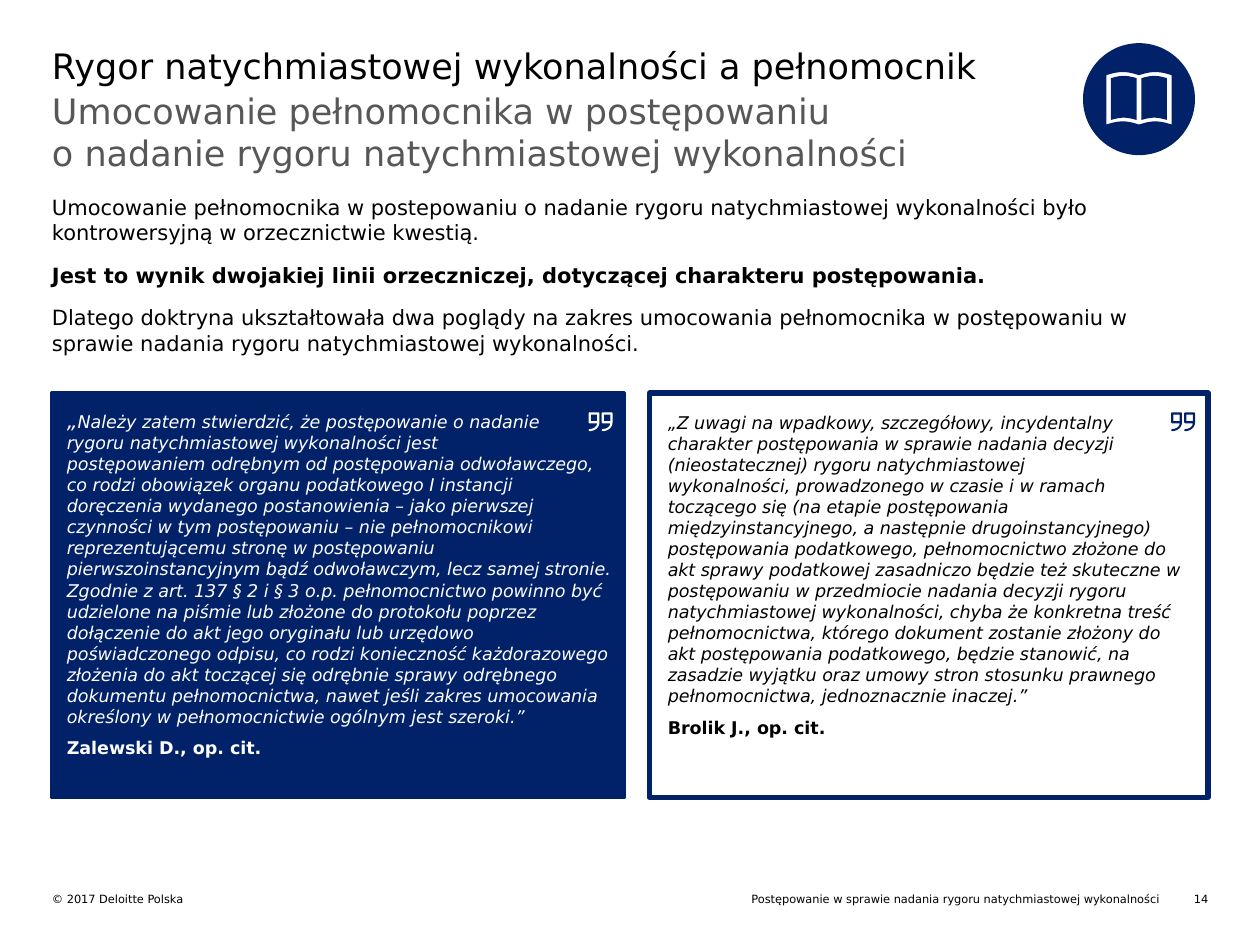
from dataclasses import dataclass
from math import cos, pi, sin, tau

from pptx import Presentation
from pptx.dml.color import RGBColor as Color
from pptx.enum.shapes import MSO_SHAPE as Preset
from pptx.enum.text import PP_ALIGN as Align
from pptx.util import Pt

Point = tuple[float, float]
Contour = list[Point]


@dataclass(frozen=True)
class Theme:
    font: str = "DejaVu Sans"
    navy: Color = Color(0x01, 0x21, 0x69)
    white: Color = Color(0xFF, 0xFF, 0xFF)
    black: Color = Color(0, 0, 0)
    grey: Color = Color(0x57, 0x57, 0x57)
    heading: float = 20
    body: float = 12
    quote: float = 10
    footer: float = 6.5


THEME = Theme()


@dataclass(frozen=True)
class Area:
    left: float
    top: float
    width: float
    height: float

    def lengths(self) -> list[Pt]:
        return [Pt(value) for value in (self.left, self.top, self.width, self.height)]


@dataclass(frozen=True)
class Passage:
    text: str
    bold: bool = False
    italic: bool = False
    lead: str = ""


@dataclass(frozen=True)
class TextBlock:
    area: Area
    passages: list[Passage]
    size: float
    color: Color = THEME.black
    align: Align = Align.LEFT
    before: float = 0
    after: float = 0


@dataclass(frozen=True)
class QuoteCard:
    frame: Area
    text: Area
    fill: Color
    border: float
    ink: Color
    mark_color: Color
    mark_left: float
    quote: Passage
    author: str


def draw_text(page, block: TextBlock) -> None:
    frame = page.shapes.add_textbox(*block.area.lengths()).text_frame
    frame.word_wrap = True
    frame.margin_left = frame.margin_top = frame.margin_right = frame.margin_bottom = 0
    for index, passage in enumerate(block.passages):
        para = frame.add_paragraph() if index else frame.paragraphs[0]
        para.alignment = block.align
        para.space_before = Pt(block.before if index else 0)
        para.space_after = Pt(block.after)
        font = para.font
        font.name, font.size = THEME.font, Pt(block.size)
        font.bold, font.italic = passage.bold, passage.italic
        font.color.rgb = block.color
        if passage.lead:
            span = para.add_run()
            span.text = passage.lead
            span.font.size = Pt(THEME.body)
        for number, line in enumerate(passage.text.splitlines()):
            if number:
                para.add_line_break()
            para.add_run().text = line


def draw_outline(page, contours: list[Contour], left: float, top: float, color: Color) -> None:
    placed = [[(Pt(left + x), Pt(top + y)) for x, y in contour] for contour in contours]
    builder = page.shapes.build_freeform(*placed[0][0], scale=1.0)
    for index, contour in enumerate(placed):
        if index:
            builder.move_to(*contour[0])
        builder.add_line_segments(contour[1:], close=True)
    shape = builder.convert_to_shape()
    shape.shadow.inherit = False
    shape.fill.solid()
    shape.fill.fore_color.rgb = color
    shape.line.fill.background()


def arched(start: float, end: float, y: float, rise: float) -> Contour:
    return [(start + (end - start) * step / 12, y - rise * sin(pi * step / 12)) for step in range(13)]


def draw_book_badge(page) -> None:
    circle = [(32 * cos(tau * step / 96), 32 * sin(tau * step / 96)) for step in range(96)]
    edge = 18.7
    cover = (arched(-edge, 0, -13.7, 1.8) + arched(0, edge, -13.7, 1.8)
             + arched(edge, 0, 14.5, 1.8) + arched(0, -edge, 14.5, 1.8))
    pages = [arched(side * 1.4, side * 16, -12, 1.3) + arched(side * 16, side * 1.4, 11.9, 1.3)
             for side in (-1, 1)]
    draw_outline(page, [circle, cover, *pages], 650.9, 56.7, THEME.navy)


def draw_quote_mark(page, left: float, top: float, color: Color) -> None:
    tail = [(0.5 + 5.7 * cos(pi / 2 * step / 8), 5.8 + 5 * sin(pi / 2 * step / 8)) for step in range(9)]
    inner = [(0.5 + 4.4 * cos(pi / 2 * step / 8), 6.3 + 3.3 * sin(pi / 2 * step / 8))
             for step in range(8, -1, -1)]
    outline = [(0.5, 0), (5.7, 0), (6.2, 0.5), *tail, (0, 10.3), *inner,
               (0.5, 6.3), (0, 5.8), (0, 0.5)]
    hole = [(1.3, 1.3), (4.9, 1.3), (4.9, 5), (1.3, 5)]
    for offset in (0, 7.5):
        draw_outline(page, [outline, hole], left + offset, top, color)


def draw_card(page, card: QuoteCard) -> None:
    shape = page.shapes.add_shape(Preset.RECTANGLE, *card.frame.lengths())
    shape.shadow.inherit = False
    shape.fill.solid()
    shape.fill.fore_color.rgb = card.fill
    shape.line.color.rgb = THEME.navy
    shape.line.width = Pt(card.border)
    draw_text(page, TextBlock(card.text, [card.quote, Passage(card.author, bold=True)],
                              THEME.quote, card.ink, before=6))
    draw_quote_mark(page, card.mark_left, 235.6, card.mark_color)


LEFT, WIDTH = 29.7, 661

BLOCKS = [
    TextBlock(Area(LEFT, 25.2, WIDTH, 26.6),
              [Passage("Rygor natychmiastowej wykonalności a pełnomocnik")], THEME.heading),
    TextBlock(Area(LEFT, 51.2, WIDTH, 59.8),
              [Passage("Umocowanie pełnomocnika w postępowaniu"),
               Passage("o nadanie rygoru natychmiastowej wykonalności")], THEME.heading, THEME.grey),
    TextBlock(Area(LEFT, 111, WIDTH, 97.2), [
        Passage("Umocowanie pełnomocnika w postepowaniu o nadanie rygoru natychmiastowej "
                "wykonalności było kontrowersyjną w orzecznictwie kwestią."),
        Passage("Jest to wynik dwojakiej linii orzeczniczej, dotyczącej charakteru postępowania.",
                bold=True),
        Passage("Dlatego doktryna ukształtowała dwa poglądy na zakres umocowania pełnomocnika "
                "w postępowaniu w sprawie nadania rygoru natychmiastowej wykonalności.")],
        THEME.body, after=10),
    TextBlock(Area(LEFT, 509.8, 316, 15.8), [Passage("© 2017 Deloitte Polska")], THEME.footer),
    TextBlock(Area(374.4, 509.8, 288.5, 15.8),
              [Passage("Postępowanie w sprawie nadania rygoru natychmiastowej wykonalności")],
              THEME.footer, align=Align.RIGHT),
    TextBlock(Area(672.5, 509.8, 18, 7.9), [Passage("14")], THEME.footer, align=Align.RIGHT),
]

CARDS = [
    QuoteCard(
        Area(29.4, 224.2, 327.6, 231.8), Area(38.2, 232.6, 311.8, 202.3),
        THEME.navy, 1.5, THEME.white, THEME.white, 336.3,
        Passage("Należy zatem stwierdzić, że postępowanie o nadanie\n"
                "rygoru natychmiastowej wykonalności jest\n"
                "postępowaniem odrębnym od postępowania odwoławczego, co rodzi obowiązek organu "
                "podatkowego I instancji doręczenia wydanego postanowienia – jako pierwszej "
                "czynności w tym postępowaniu – nie pełnomocnikowi reprezentującemu stronę w "
                "postępowaniu pierwszoinstancyjnym bądź odwoławczym, lecz samej stronie. "
                "Zgodnie z art. 137 § 2 i § 3 o.p. pełnomocnictwo powinno być udzielone na piśmie "
                "lub złożone do protokołu poprzez dołączenie do akt jego oryginału lub urzędowo "
                "poświadczonego odpisu, co rodzi konieczność każdorazowego złożenia do akt "
                "toczącej się odrębnie sprawy odrębnego dokumentu pełnomocnictwa, nawet jeśli "
                "zakres umocowania określony w pełnomocnictwie ogólnym jest szeroki.”",
                italic=True, lead="„"),
        "Zalewski D., op. cit."),
    QuoteCard(
        Area(371.1, 224.6, 319.2, 231.1), Area(381.6, 235.4, 298.1, 187.9),
        THEME.white, 3, THEME.black, THEME.navy, 669.2,
        Passage("„Z uwagi na wpadkowy, szczegółowy, incydentalny charakter postępowania w sprawie "
                "nadania decyzji (nieostatecznej) rygoru natychmiastowej\n"
                "wykonalności, prowadzonego w czasie i w ramach toczącego się (na etapie "
                "postępowania międzyinstancyjnego, a następnie drugoinstancyjnego) postępowania "
                "podatkowego, pełnomocnictwo złożone do akt sprawy podatkowej zasadniczo będzie "
                "też skuteczne w postępowaniu w przedmiocie nadania decyzji rygoru "
                "natychmiastowej wykonalności, chyba że konkretna treść pełnomocnictwa, którego "
                "dokument zostanie złożony do akt postępowania podatkowego, będzie stanowić, na "
                "zasadzie wyjątku oraz umowy stron stosunku prawnego pełnomocnictwa, "
                "jednoznacznie inaczej.”", italic=True),
        "Brolik J., op. cit."),
]


def main() -> None:
    deck = Presentation()
    deck.slide_width, deck.slide_height = Pt(720), Pt(540)
    page = deck.slides.add_slide(deck.slide_layouts[6])
    for block in BLOCKS:
        draw_text(page, block)
    draw_book_badge(page)
    for card in CARDS:
        draw_card(page, card)
    deck.save("out.pptx")


if __name__ == "__main__":
    main()
